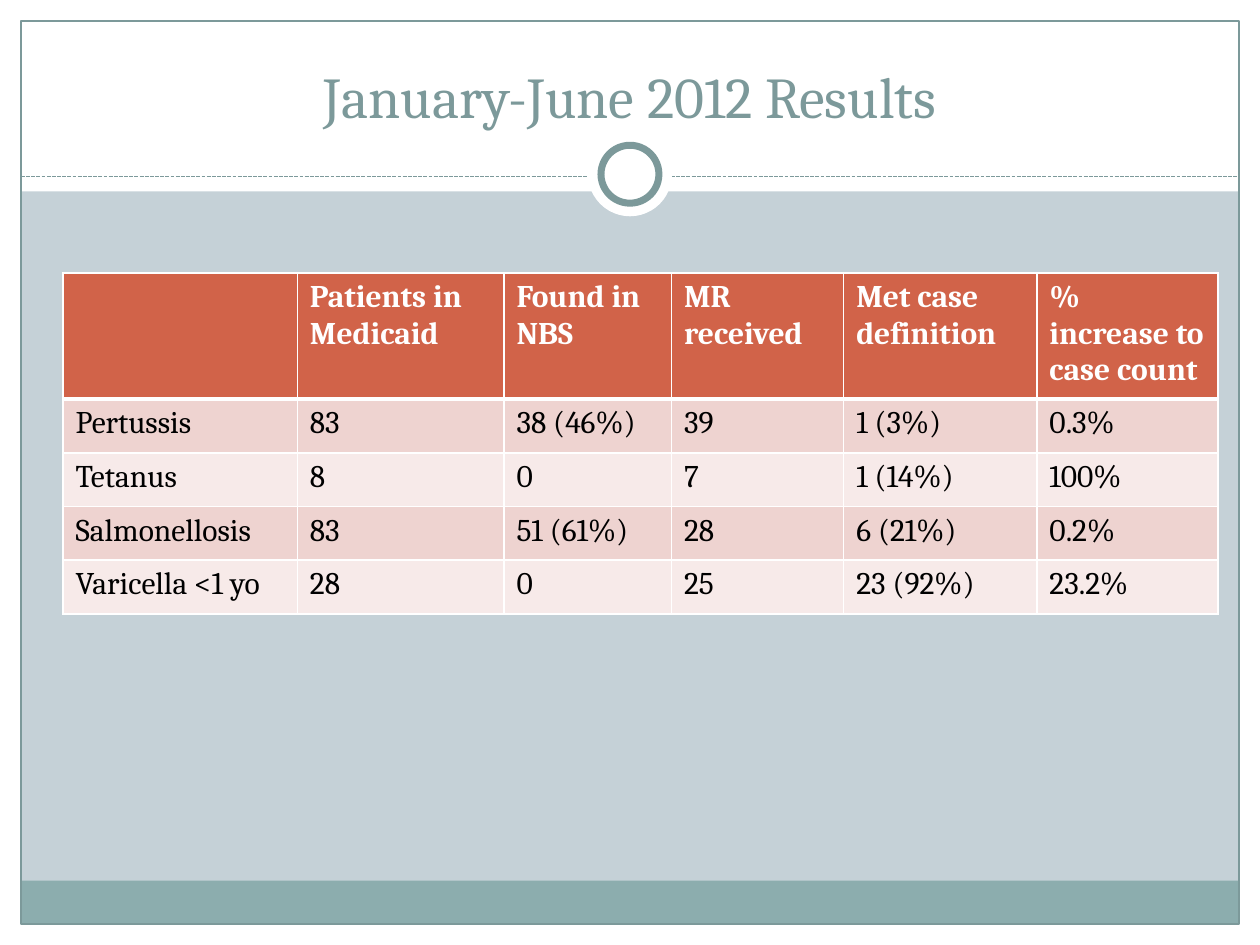
import pptx
import pptx.dml.color
import pptx.enum.dml
import pptx.enum.shapes
import pptx.enum.text
import pptx.util
import lxml.etree

HUES = {
    "back": "C5D1D7", "white": "FFFFFF", "band": "8CADAE", "teal": "7C999A",
    "head": "D16349", "odd": "EED3D0", "even": "F7EAE9", "black": "000000",
}
FONT = "Cambria"
KIND = pptx.enum.shapes.MSO_SHAPE
Pt = pptx.util.Pt

deck = pptx.Presentation()
deck.slide_width = pptx.util.Inches(10)
deck.slide_height = pptx.util.Inches(7.5)
UNIT = deck.slide_width / 60  # the slide is a grid of 60 columns by 45 rows
slide = deck.slides.add_slide(deck.slide_layouts[6])
shapes = slide.shapes


def grid(*cells):
    return [round(n * UNIT) for n in cells]


def paint(part, hue):
    """Give a fill or a line one solid colour."""
    part.solid()
    part.fore_color.rgb = pptx.dml.color.RGBColor.from_string(HUES[hue])


paint(slide.background.fill, "back")

# Margins, header, footer band, frame and ring, from back to front
parts = [
    (KIND.RECTANGLE, (0, 44, 60, 1), "white", 0),
    (KIND.RECTANGLE, (0, 0, 60, 9.12), "white", 0),
    (KIND.RECTANGLE, (0, 0, 1, 45), "white", 0),
    (KIND.RECTANGLE, (59, 0, 1, 45), "white", 0),
    (KIND.RECTANGLE, (1, 41.94, 58, 2.06), "band", 0),
    (KIND.RECTANGLE, (1, 1, 58, 43), None, 0.75),
    (KIND.OVAL, (28, 6.3, 4, 4), "white", 0),
    (KIND.OVAL, (28.62, 6.92, 2.76, 2.76), "white", 4),
]
for kind, box, hue, width in parts:
    if kind == KIND.OVAL and not width:
        rule = shapes.add_connector(
            pptx.enum.shapes.MSO_CONNECTOR.STRAIGHT, *grid(1, 8.4, 59, 8.4))
        paint(rule.line.fill, "teal")
        rule.line.width = Pt(0.75)
        rule.line.dash_style = pptx.enum.dml.MSO_LINE.SQUARE_DOT
        props = rule.line._get_or_add_ln().getparent()
        lxml.etree.SubElement(props, pptx.oxml.ns.qn("a:effectLst"))
    shape = shapes.add_shape(kind, *grid(*box))
    shape.shadow.inherit = False
    if hue:
        paint(shape.fill, hue)
    else:
        shape.fill.background()
    if width:
        paint(shape.line.fill, "teal")
        shape.line.width = Pt(width)
    else:
        shape.line.fill.background()

# Title
title = shapes.add_textbox(*grid(2, 1.5, 56, 5)).text_frame
title.word_wrap = True
title.vertical_anchor = pptx.enum.text.MSO_ANCHOR.BOTTOM
line = title.paragraphs[0]
line.alignment = pptx.enum.text.PP_ALIGN.CENTER
run = line.add_run()
run.text = "January-June 2012 Results"
run.font.name, run.font.size = FONT, Pt(33)
paint(run.font.fill, "teal")

# Results table
rows = [
    ["", "Patients in Medicaid", "Found in NBS", "MR received",
     "Met case definition", "% increase to case count"],
    ["Pertussis", "83", "38 (46%)", "39", "1 (3%)", "0.3%"],
    ["Tetanus", "8", "0", "7", "1 (14%)", "100%"],
    ["Salmonellosis", "83", "51 (61%)", "28", "6 (21%)", "0.2%"],
    ["Varicella <1 yo", "28", "0", "25", "23 (92%)", "23.2%"],
]
wide = grid(11.16, 9.84, 7.98, 8.2, 9.2, 8.62)
tall = grid(5.7, *[2.56] * 4)
table = shapes.add_table(
    len(rows), len(wide), *grid(3, 13), sum(wide), sum(tall)).table
for col, width in zip(table.columns, wide):
    col.width = width
for r, texts in enumerate(rows):
    table.rows[r].height = tall[r]
    for c, text in enumerate(texts):
        cell = table.cell(r, c)
        props = cell._tc.get_or_add_tcPr()
        for side in "LRTB":
            thick = (r, side) in [(0, "B"), (1, "T")]
            edge = lxml.etree.SubElement(
                props, pptx.oxml.ns.qn("a:ln" + side), w=str(Pt(3 if thick else 1)))
            fill = lxml.etree.SubElement(edge, pptx.oxml.ns.qn("a:solidFill"))
            lxml.etree.SubElement(
                fill, pptx.oxml.ns.qn("a:srgbClr"), val=HUES["white"])
        paint(cell.fill, "head" if r == 0 else "odd" if r % 2 else "even")
        if text:
            run = cell.text_frame.paragraphs[0].add_run()
            run.text = text
            run.font.name, run.font.size = FONT, Pt(18)
            run.font.bold = r == 0
            paint(run.font.fill, "black" if r else "white")

deck.save("out.pptx")
